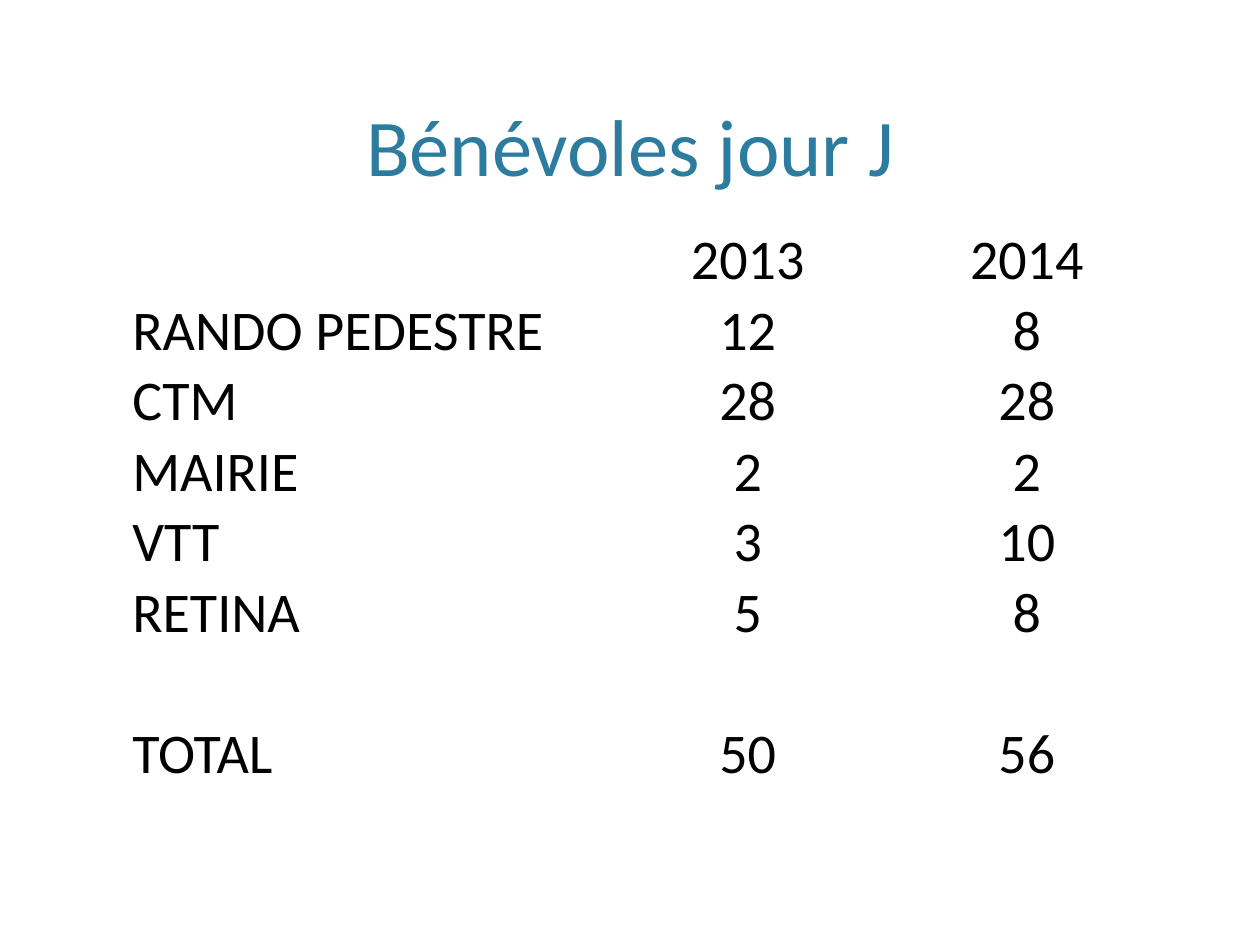
from pptx import Presentation
from pptx.dml.color import RGBColor
from pptx.enum.text import MSO_ANCHOR, PP_ALIGN
from pptx.util import Inches, Pt

COLORS = {"title": "2C7C9F", "text": "000000"}


def write(tf, text, size=32, color="text", align=PP_ALIGN.LEFT):
    p = tf.paragraphs[0]
    p.alignment = align
    r = p.add_run()
    r.text = text
    r.font.name = "Calibri"
    r.font.size = Pt(size)
    r.font.color.rgb = RGBColor.from_string(COLORS[color])


prs = Presentation()
prs.slide_width, prs.slide_height = Inches(10), Inches(7.5)
s = prs.slides.add_slide(prs.slide_layouts[5])

# Title
title = s.shapes.title
title.left, title.top = Inches(0.6), Inches(0.12)
title.width, title.height = Inches(8.8), Inches(1.46)
title.text_frame.vertical_anchor = MSO_ANCHOR.BOTTOM
write(title.text_frame, "Bénévoles jour J", size=46, color="title",
      align=PP_ALIGN.CENTER)

# Volunteers per activity and year
rows = [
    ("", "2013", "2014"),
    ("RANDO PEDESTRE", "12", "8"),
    ("CTM", "28", "28"),
    ("MAIRIE", "2", "2"),
    ("VTT", "3", "10"),
    ("RETINA", "5", "8"),
    ("", "", ""),
    ("TOTAL", "50", "56"),
    ("", "", ""),
]
col_widths = [3.76, 2.27, 2.16]
row_heights = [0.56] * 8 + [0.41]

table = s.shapes.add_table(
    len(rows), len(col_widths), Inches(1.04), Inches(1.78),
    Inches(sum(col_widths)), Inches(sum(row_heights))).table
table.first_row = False
table.horz_banding = False
for column, width in zip(table.columns, col_widths):
    column.width = Inches(width)
for row, height in zip(table.rows, row_heights):
    row.height = Inches(height)

# Cells: names on the left, numbers centred
for i, values in enumerate(rows):
    for j, value in enumerate(values):
        cell = table.cell(i, j)
        cell.fill.background()
        cell.vertical_anchor = MSO_ANCHOR.BOTTOM
        cell.margin_left = cell.margin_right = cell.margin_top = Inches(0.01)
        cell.margin_bottom = Inches(0)
        if value:
            write(cell.text_frame, value,
                  align=PP_ALIGN.CENTER if j else PP_ALIGN.LEFT)

prs.save("out.pptx")
